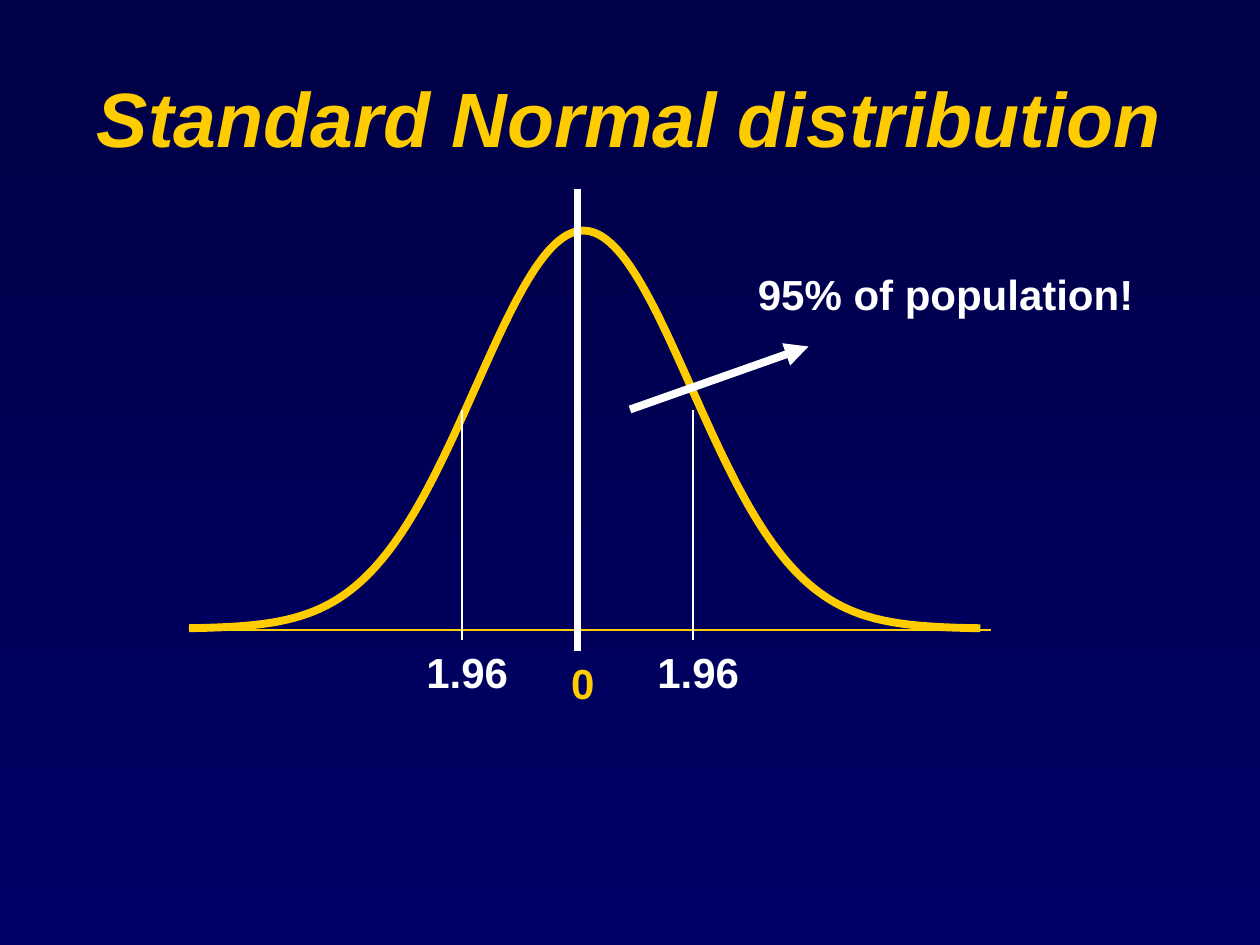
"""Build a slide that shows the standard normal curve and its central 95 %."""

import dataclasses
import math

import pptx
import pptx.dml.color
import pptx.enum.shapes
import pptx.enum.text
import pptx.oxml
import pptx.oxml.ns
import pptx.shapes.connector
import pptx.slide
import pptx.util

Pt = pptx.util.Pt
RGBColor = pptx.dml.color.RGBColor
Align = pptx.enum.text.PP_ALIGN
Anchor = pptx.enum.text.MSO_ANCHOR

YELLOW = RGBColor(0xFF, 0xCC, 0x00)
WHITE = RGBColor(0xFF, 0xFF, 0xFF)
NAVY_TOP = RGBColor(0x00, 0x00, 0x47)
NAVY_BOTTOM = RGBColor(0x00, 0x00, 0x66)
THICK = 4.5
THIN = 0.75


@dataclasses.dataclass(frozen=True)
class Line:
    start: tuple[float, float]
    end: tuple[float, float]
    color: RGBColor
    width: float


@dataclasses.dataclass(frozen=True)
class Bell:
    left: float
    step: float
    steps: int
    mean: float
    deviation: float
    base: float
    height: float

    def points(self) -> list[tuple[int, int]]:
        """Return the points of the curve from left to right."""
        xs = [self.left + self.step * index for index in range(self.steps + 1)]
        return [(Pt(x), Pt(self.y_at(x))) for x in xs]

    def y_at(self, x: float) -> float:
        """Return the vertical position of the curve at x."""
        score = (x - self.mean) / self.deviation
        return self.base - self.height * math.exp(-score * score / 2)


AXIS = Line((114, 360), (566.5, 360), YELLOW, 1.37)
MEAN_LINE = Line((330, 108), (330, 372), WHITE, THICK)
LIMITS = [Line((x, 234), (x, 366), WHITE, THIN) for x in (264, 396)]
POINTER = Line((360, 234), (462, 198), WHITE, THICK)
CURVE = Bell(left=108, step=2.25, steps=201, mean=333.4, deviation=61.6,
             base=359.3, height=227.5)
LABEL_WIDTH = 78


def paint_background(slide: pptx.slide.Slide) -> None:
    """Fill the slide with a vertical navy gradient."""
    fill = slide.background.fill
    fill.gradient()
    fill.gradient_angle = 270
    for stop, color in zip(fill.gradient_stops, (NAVY_TOP, NAVY_BOTTOM)):
        stop.color.rgb = color


def add_text(slide: pptx.slide.Slide, text: str, *, left: float, top: float,
             width: float, height: float = 36, size: float = 24,
             color: RGBColor = WHITE, italic: bool = False,
             align: Align = Align.CENTER, anchor: Anchor = Anchor.TOP) -> None:
    """Add a bold one-paragraph text box."""
    shape = slide.shapes.add_textbox(Pt(left), Pt(top), Pt(width), Pt(height))
    frame = shape.text_frame
    frame.word_wrap = True
    frame.vertical_anchor = anchor
    paragraph = frame.paragraphs[0]
    paragraph.alignment = align
    run = paragraph.add_run()
    run.text = text
    run.font.name = "Arial"
    run.font.size = Pt(size)
    run.font.bold = True
    run.font.italic = italic
    run.font.color.rgb = color


def add_line(slide: pptx.slide.Slide, line: Line) -> pptx.shapes.connector.Connector:
    """Add a straight line without shadow."""
    connector = slide.shapes.add_connector(
        pptx.enum.shapes.MSO_CONNECTOR.STRAIGHT,
        *(Pt(value) for value in line.start + line.end))
    connector.line.color.rgb = line.color
    connector.line.width = Pt(line.width)
    properties = connector._element.spPr
    properties.append(pptx.oxml.parse_xml(
        f"<a:effectLst {pptx.oxml.ns.nsdecls('a')}/>"))
    return connector


def add_arrow(slide: pptx.slide.Slide, line: Line) -> None:
    """Add a line that ends in a triangular arrowhead."""
    connector = add_line(slide, line)
    connector.line._get_or_add_ln().append(pptx.oxml.parse_xml(
        f"<a:tailEnd {pptx.oxml.ns.nsdecls('a')} type='triangle'/>"))


def add_curve(slide: pptx.slide.Slide, bell: Bell) -> None:
    """Draw the bell curve as an open outline."""
    first, *others = bell.points()
    builder = slide.shapes.build_freeform(*first)
    builder.add_line_segments(others, close=False)
    shape = builder.convert_to_shape()
    shape.shadow.inherit = False
    shape.fill.background()
    shape.line.color.rgb = YELLOW
    shape.line.width = Pt(THICK)


def main() -> None:
    """Build and save the presentation."""
    presentation = pptx.Presentation()
    presentation.slide_width = Pt(720)
    presentation.slide_height = Pt(540)
    slide = presentation.slides.add_slide(presentation.slide_layouts[6])
    paint_background(slide)
    add_text(slide, "Standard Normal distribution", left=36, top=21.6,
             width=648, height=90, size=44, color=YELLOW, italic=True,
             anchor=Anchor.MIDDLE)
    add_line(slide, AXIS)
    add_curve(slide, CURVE)
    add_line(slide, MEAN_LINE)
    add_text(slide, "0", left=294, top=372, width=LABEL_WIDTH, color=YELLOW)
    for limit in LIMITS:
        x, bottom = limit.end
        add_text(slide, "1.96", left=x - 36, top=bottom, width=LABEL_WIDTH)
    for limit in LIMITS:
        add_line(slide, limit)
    add_text(slide, "95% of population!", left=426, top=150, width=258,
             align=Align.LEFT)
    add_arrow(slide, POINTER)
    presentation.save("out.pptx")


if __name__ == "__main__":
    main()
